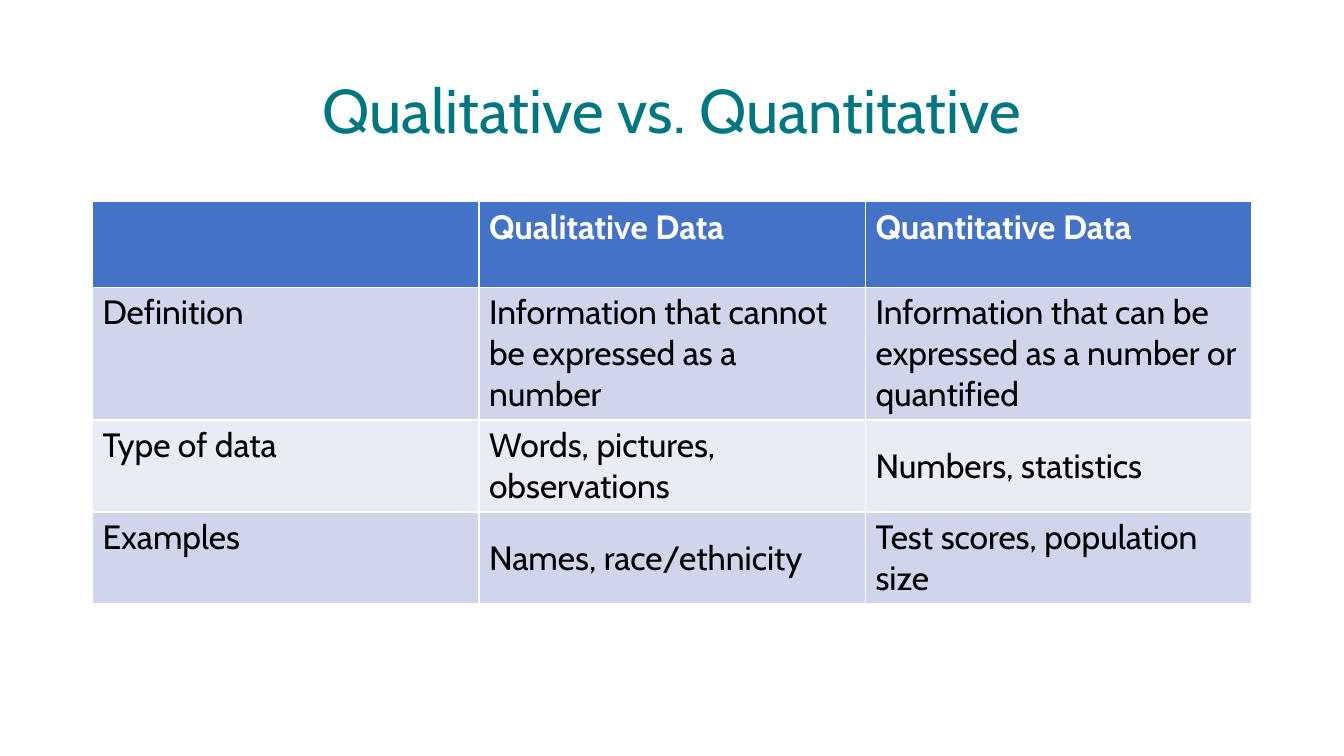
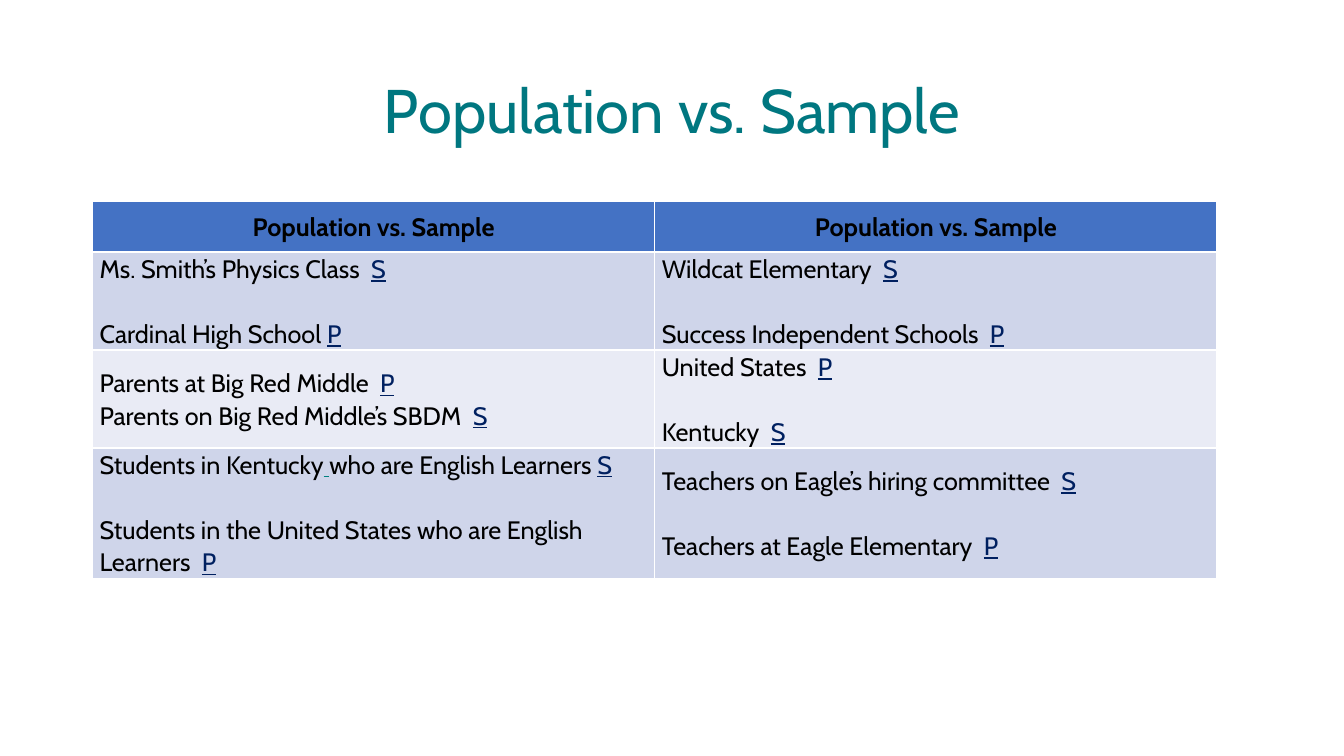
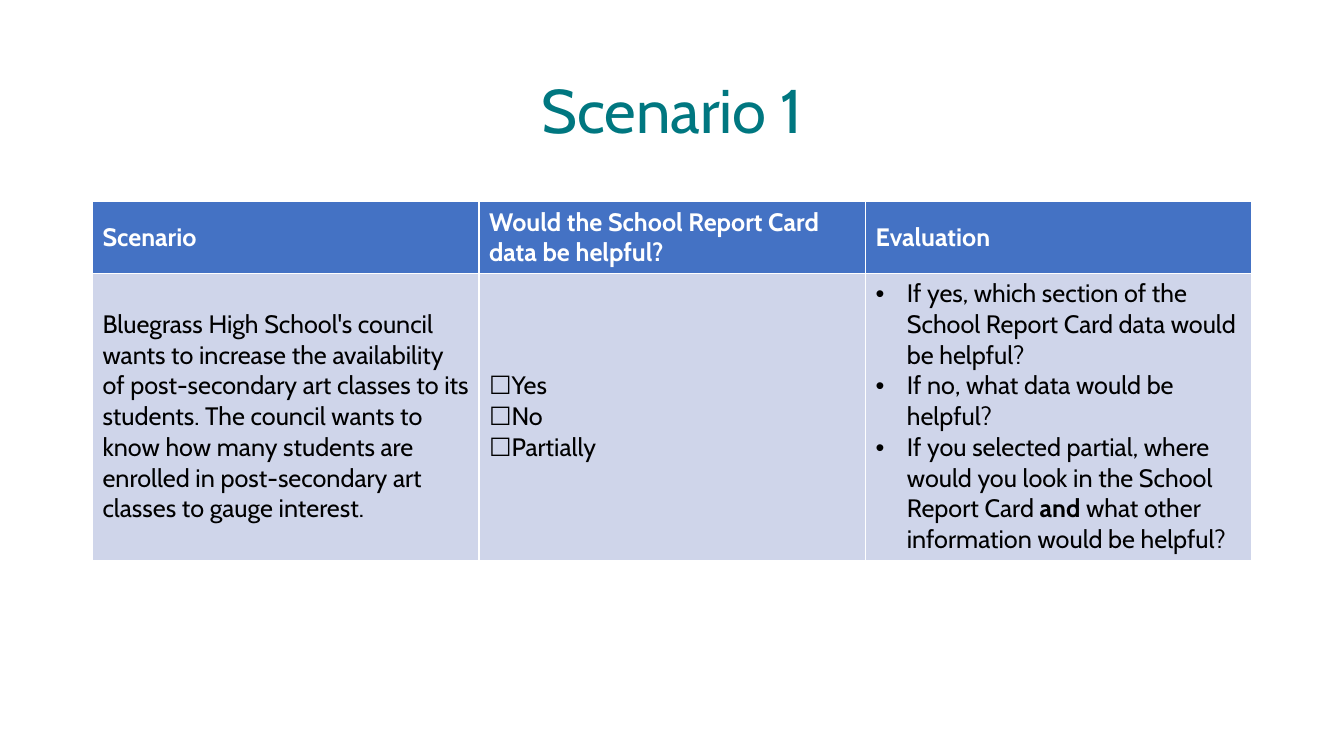
"""Build three slides that each hold a title and a comparison table."""
from lxml.etree import SubElement
from pptx import Presentation
from pptx.dml.color import RGBColor
from pptx.enum.text import MSO_ANCHOR, MSO_AUTO_SIZE, PP_ALIGN
from pptx.oxml.ns import qn
from pptx.util import Cm, Pt

FONT = "Cabin"
TEAL, BLACK, WHITE, NAVY = "007780", "000000", "FFFFFF", "002060"
HEADER_FILL, BAND_FILLS = "4472C4", ("CFD5EA", "E9EBF5")
LEFT, TITLE_TOP, TABLE_TOP = Cm(2.33), Cm(1.01), Cm(5.08)
TITLE_WIDTH, TITLE_HEIGHT = Cm(29.21), Cm(3.68)


def rgb(value):
    """Turn a hex string into a colour."""
    return RGBColor.from_string(value)


def write(frame, paragraphs, size=18, color=BLACK, bold=False, align=PP_ALIGN.LEFT,
          line_spacing=1.0, gap=0, bullet=None):
    """Fill a text frame; a paragraph is a string or a list of spans."""
    for index, spans in enumerate(paragraphs):
        para = frame.add_paragraph() if index else frame.paragraphs[0]
        if bullet:
            properties = para._p.get_or_add_pPr()
            properties.set("marL", str(Cm(0.79)))
            properties.set("indent", str(-Cm(0.79)))
            SubElement(properties, qn("a:buFont")).set("typeface", "Arial")
            SubElement(properties, qn("a:buChar")).set("char", bullet)
        para.alignment = align
        para.line_spacing = line_spacing
        if index and gap:
            para.space_before = Pt(gap)
        for item in [spans] if isinstance(spans, str) else spans:
            text, extra = (item, {}) if isinstance(item, str) else item
            span = para.add_run()
            span.text = text
            span.font.name = FONT
            span.font.size = Pt(size)
            span.font.bold = extra.get("bold", bold)
            span.font.underline = extra.get("underline", False)
            span.font.color.rgb = rgb(extra.get("color", color))


SAMPLE = ("S", {"color": NAVY, "underline": True})
POPULATION = ("P", {"color": NAVY, "underline": True})
TEAL_SPACE = (" ", {"color": "008080", "underline": True})

pages = [
    {
        "title": "Qualitative vs. Quantitative",
        "column_width": 9.74,
        "row_heights": [2.16, 3.33, 2.32, 2.32],
        "top_labels": True,
        "header": {"size": 24, "color": WHITE},
        "body": {"size": 24},
        "rows": [
            [[], ["Qualitative Data"], ["Quantitative Data"]],
            [["Definition"],
             ["Information that cannot be expressed as a number"],
             ["Information that can be expressed as a number or quantified"]],
            [["Type of data"], ["Words, pictures, observations"], ["Numbers, statistics"]],
            [["Examples"], ["Names, race/ethnicity"], ["Test scores, population size"]],
        ],
    },
    {
        "title": "Population vs. Sample",
        "column_width": 14.17,
        "row_heights": [1.27, 2.47, 2.47, 3.28],
        "tight": True,
        "header": {"align": PP_ALIGN.CENTER, "line_spacing": 1.06},
        "body": {"line_spacing": 1.06, "gap": 23.2},
        "ungapped": "Parents at Big Red Middle",
        "rows": [
            [["Population vs. Sample"], ["Population vs. Sample"]],
            [[["Ms. Smith’s Physics Class  ", SAMPLE], ["Cardinal High School ", POPULATION]],
             [["Wildcat Elementary  ", SAMPLE], ["Success Independent Schools  ", POPULATION]]],
            [[["Parents at Big Red Middle  ", POPULATION],
              ["Parents on Big Red Middle’s SBDM  ", SAMPLE]],
             [["United States  ", POPULATION], ["Kentucky  ", SAMPLE]]],
            [[["Students in Kentucky", TEAL_SPACE, "who are English Learners ", SAMPLE],
              ["Students in the United States who are English Learners  ", POPULATION]],
             [["Teachers on Eagle’s hiring committee  ", SAMPLE],
              ["Teachers at Eagle Elementary  ", POPULATION]]],
        ],
    },
    {
        "title": "Scenario 1",
        "column_width": 9.74,
        "row_heights": [1.78, 7.2],
        "header": {"color": WHITE},
        "body": {},
        "bullet_column": 2,
        "rows": [
            [["Scenario"], ["Would the School Report Card data be helpful?"], ["Evaluation"]],
            [["Bluegrass High School's council wants to increase the availability of "
              "post-secondary art classes to its students. The council wants to know how many "
              "students are enrolled in post-secondary art classes to gauge interest."],
             ["☐Yes", "☐No", "☐Partially"],
             ["If yes, which section of the School Report Card data would be helpful?",
              "If no, what data would be helpful?",
              ["If you selected partial, where would you look in the School Report Card ",
               ("and", {"bold": True}), " what other information would be helpful?"]]],
        ],
    },
]

deck = Presentation()
deck.slide_width, deck.slide_height = Cm(33.87), Cm(19.05)

for content in pages:
    page = deck.slides.add_slide(deck.slide_layouts[5])
    title = page.shapes.title
    title.left, title.top, title.width, title.height = LEFT, TITLE_TOP, TITLE_WIDTH, TITLE_HEIGHT
    title.text_frame.auto_size = MSO_AUTO_SIZE.NONE
    title.text_frame.vertical_anchor = MSO_ANCHOR.MIDDLE
    write(title.text_frame, [content["title"]], size=44, color=TEAL,
          align=PP_ALIGN.CENTER, line_spacing=0.9)

    rows, heights = content["rows"], content["row_heights"]
    column_count = len(rows[0])
    table = page.shapes.add_table(
        len(rows), column_count, LEFT, TABLE_TOP,
        Cm(content["column_width"] * column_count), Cm(sum(heights))).table
    for column in table.columns:
        column.width = Cm(content["column_width"])

    for row_index, row in enumerate(rows):
        table.rows[row_index].height = Cm(heights[row_index])
        is_header = row_index == 0
        for column_index, paragraphs in enumerate(row):
            cell = table.cell(row_index, column_index)
            cell.fill.solid()
            cell.fill.fore_color.rgb = rgb(
                HEADER_FILL if is_header else BAND_FILLS[(row_index - 1) % 2])
            at_top = content.get("top_labels") and (is_header or column_index == 0)
            cell.vertical_anchor = MSO_ANCHOR.TOP if at_top else MSO_ANCHOR.MIDDLE
            if content.get("tight"):
                cell.margin_left = cell.margin_right = Cm(0.18)
                cell.margin_top = cell.margin_bottom = Cm(0)
            style = dict(content["header"] if is_header else content["body"], bold=is_header)
            if not is_header and column_index == content.get("bullet_column"):
                style["bullet"] = "•"
            if "ungapped" in content and cell is not None and paragraphs[0][0].startswith(
                    content["ungapped"]):
                style["gap"] = 0
            write(cell.text_frame, paragraphs, **style)

deck.save("out.pptx")
